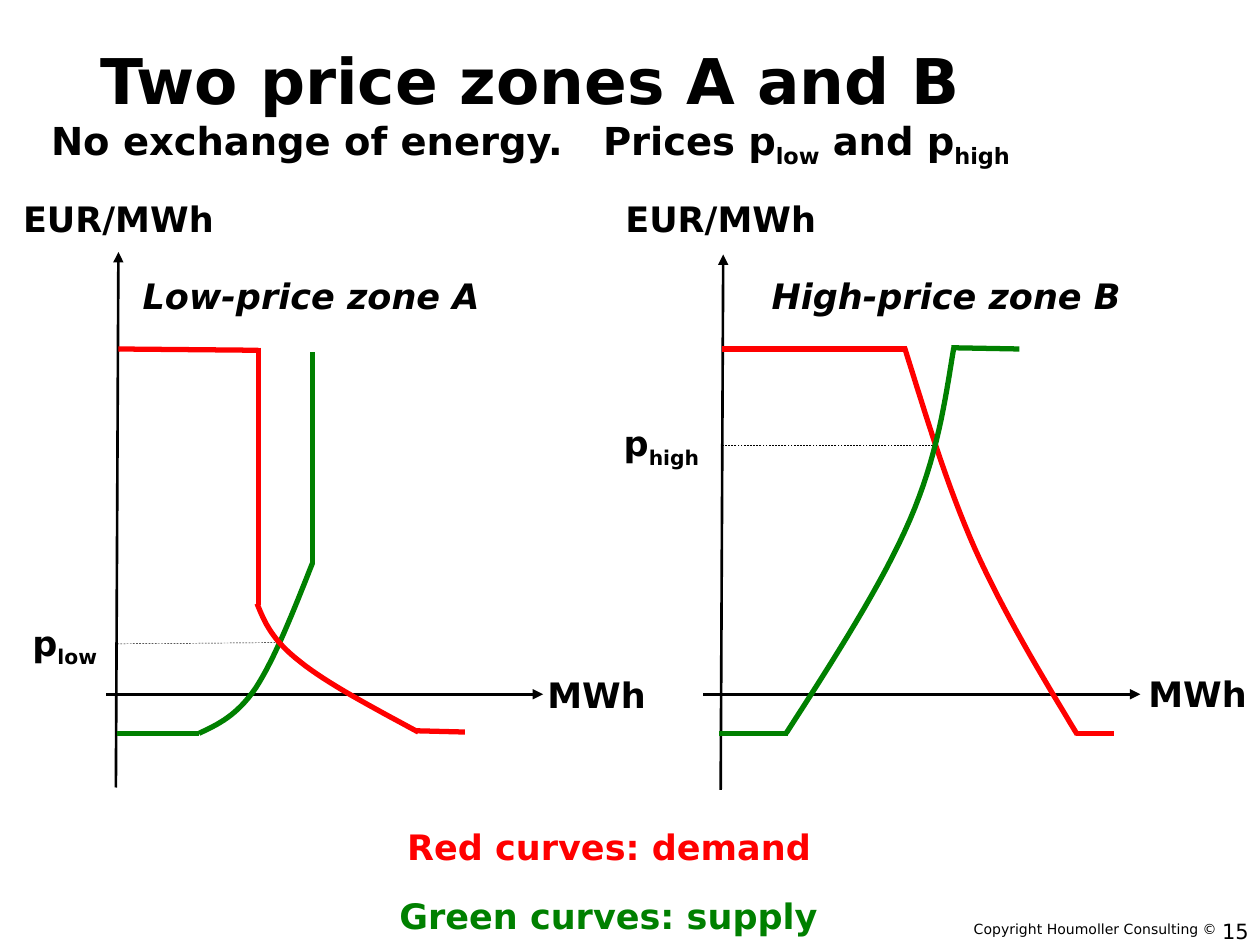
from dataclasses import dataclass

from lxml.etree import SubElement
from pptx import Presentation
from pptx.dml.color import RGBColor
from pptx.enum.dml import MSO_LINE
from pptx.enum.shapes import MSO_CONNECTOR
from pptx.enum.text import MSO_ANCHOR, MSO_AUTO_SIZE, PP_ALIGN
from pptx.oxml.ns import qn
from pptx.util import Emu, Pt

PX = 9144  # EMU per px: 100 px to the inch
FONT = "DejaVu Sans"
BLACK, RED, GREEN = "000000", "FF0000", "008000"
CURVE_STEPS = 16

Point = tuple[int, int]


@dataclass(frozen=True)
class Span:
    text: str
    size: int = 20
    bold: bool = True
    italic: bool = False
    color: str = BLACK
    subscript: bool = False
    spacing: int = 0  # extra letter spacing, hundredths of a point


@dataclass(frozen=True)
class Label:
    box: tuple[int, int, int, int]
    lines: list[list[Span]]
    align: PP_ALIGN = PP_ALIGN.CENTER
    wrap: bool = False
    grow: bool = True
    anchor: MSO_ANCHOR = MSO_ANCHOR.TOP


@dataclass(frozen=True)
class Line:
    start: Point
    end: Point
    color: str = BLACK
    width: float = 3
    arrow: bool = False
    dashed: bool = False


@dataclass(frozen=True)
class Curve:
    points: list[Point]  # start, then two handles and an end per Bezier piece
    color: str


def rgb(color: str) -> RGBColor:
    return RGBColor.from_string(color)


def px(value: float) -> Emu:
    return Emu(round(value * PX))


def add_span(para, item: Span) -> None:
    span = para.add_run()
    span.text = item.text
    style = {"name": FONT, "size": Pt(item.size), "bold": item.bold, "italic": item.italic}
    for name, value in style.items():
        setattr(span.font, name, value)
    span.font.color.rgb = rgb(item.color)
    properties = span._r.get_or_add_rPr()
    if item.subscript:
        properties.set("baseline", "-25000")
    if item.spacing:
        properties.set("spc", str(item.spacing))


def add_label(page, label: Label) -> None:
    frame = page.shapes.add_textbox(*map(px, label.box)).text_frame
    grow = MSO_AUTO_SIZE.SHAPE_TO_FIT_TEXT if label.grow else MSO_AUTO_SIZE.NONE
    style = {"word_wrap": label.wrap, "auto_size": grow, "vertical_anchor": label.anchor}
    for name, value in style.items():
        setattr(frame, name, value)
    para = frame.paragraphs[0]
    para.alignment = label.align
    for index, line in enumerate(label.lines):
        if index:
            para.add_line_break()
        for item in line:
            add_span(para, item)


def add_line(page, item: Line) -> None:
    line = page.shapes.add_connector(
        MSO_CONNECTOR.STRAIGHT, *map(px, item.start + item.end))
    line.line.color.rgb = rgb(item.color)
    line.line.width = Pt(item.width)
    if item.dashed:
        line.line.dash_style = MSO_LINE.DASH
    if item.arrow:
        SubElement(line.line._get_or_add_ln(), qn("a:headEnd"), type="triangle")
    SubElement(line._element.spPr, qn("a:effectLst"))


def bezier(a: Point, b: Point, c: Point, d: Point, t: float) -> tuple[Emu, Emu]:
    weights = ((1 - t) ** 3, 3 * t * (1 - t) ** 2, 3 * t ** 2 * (1 - t), t ** 3)
    x, y = (sum(w * v for w, v in zip(weights, axis)) for axis in zip(a, b, c, d))
    return px(x), px(y)


def add_curve(page, curve: Curve) -> None:
    points = curve.points
    builder = page.shapes.build_freeform(*map(px, points[0]), scale=1.0)
    for first in range(0, len(points) - 1, 3):
        piece = points[first:first + 4]
        builder.add_line_segments(
            [bezier(*piece, step / CURVE_STEPS) for step in range(1, CURVE_STEPS + 1)],
            close=False)
    shape = builder.convert_to_shape()
    shape.shadow.inherit = False
    shape.fill.background()
    shape.line.color.rgb = rgb(curve.color)
    shape.line.width = Pt(3)


def axis(tip: Point, foot: Point) -> Line:
    return Line(tip, foot, width=1.5, arrow=True)


def price_guide(crossing: Point, at_axis: Point) -> Line:
    return Line(crossing, at_axis, width=0.25, dashed=True)


def price_label(box: tuple[int, int, int, int], name: str, wrap: bool = False) -> Label:
    return Label(box, [[Span("p"), Span(name, subscript=True)]], wrap=wrap)


TITLE = Label((-29, 21, 900, 125), [
    [Span("Two price zones A and B", 36)],
    [Span("No exchange of energy.", 22), Span(" ", 22, spacing=1530),
     Span("Prices p", 22), Span("low", 22, subscript=True),
     Span(" and p", 22), Span("high", 22, subscript=True)],
], wrap=True, grow=False, anchor=MSO_ANCHOR.MIDDLE)

FOOTER = [
    Label((763, 726, 216, 23), [[Span("Copyright Houmoller Consulting ©", 8, bold=False)]],
          align=PP_ALIGN.LEFT),
    Label((768, 724, 233, 52), [[Span("15", 12, bold=False)]],
          align=PP_ALIGN.RIGHT, wrap=True, grow=False),
]

ZONE_A = [
    axis((94, 200), (92, 625)),
    axis((431, 551), (84, 551)),
    Label((3, 152, 182, 44), [[Span("EUR/MWh")]]),
    Label((101, 213, 292, 44), [[Span("Low-price zone A", italic=True)]]),
    Label((424, 530, 99, 44), [[Span("MWh")]]),
    price_guide((221, 510), (93, 511)),
    price_label((13, 488, 77, 44), "low", wrap=True),
    # Supply
    Line((248, 448), (248, 279), GREEN),
    Line((93, 582), (158, 582), GREEN),
    Curve([(158, 582), (173, 575), (188, 568), (203, 546),
           (218, 523), (233, 485), (248, 447)], GREEN),
    # Demand
    Line((94, 277), (205, 278), RED),
    Line((205, 276), (205, 480), RED),
    Curve([(204, 479), (210, 494), (216, 508), (238, 525),
           (259, 542), (295, 561), (332, 581)], RED),
    Line((331, 580), (369, 581), RED),
]

ZONE_B = [
    axis((574, 202), (572, 627)),
    axis((905, 551), (558, 551)),
    Label((481, 152, 182, 44), [[Span("EUR/MWh")]]),
    Label((601, 213, 300, 44), [[Span("High-price zone B", italic=True)]]),
    Label((901, 529, 99, 44), [[Span("MWh")]]),
    price_guide((743, 353), (573, 353)),
    price_label((482, 330, 86, 44), "high"),
    # Demand
    Line((573, 277), (720, 277), RED),
    Curve([(718, 276), (735, 330), (751, 384), (774, 436),
           (797, 487), (826, 535), (855, 583)], RED),
    Line((854, 582), (884, 582), RED),
    # Supply
    Line((755, 276), (809, 277), GREEN),
    Curve([(757, 276), (750, 319), (744, 362), (722, 413),
           (700, 464), (662, 523), (624, 582)], GREEN),
    Line((571, 582), (625, 582), GREEN),
]

LEGEND = [
    Label((313, 650, 341, 44), [[Span("Red curves: demand", color=RED)]]),
    Label((307, 705, 352, 44), [[Span("Green curves: supply", color=GREEN)]]),
]

DRAW = {Label: add_label, Line: add_line, Curve: add_curve}


def main() -> None:
    deck = Presentation()
    deck.slide_width, deck.slide_height = px(1000), px(750)
    page = deck.slides.add_slide(deck.slide_layouts[6])
    for item in [TITLE, *FOOTER, *ZONE_B, *ZONE_A, *LEGEND]:
        DRAW[type(item)](page, item)
    deck.save("out.pptx")


if __name__ == "__main__":
    main()
